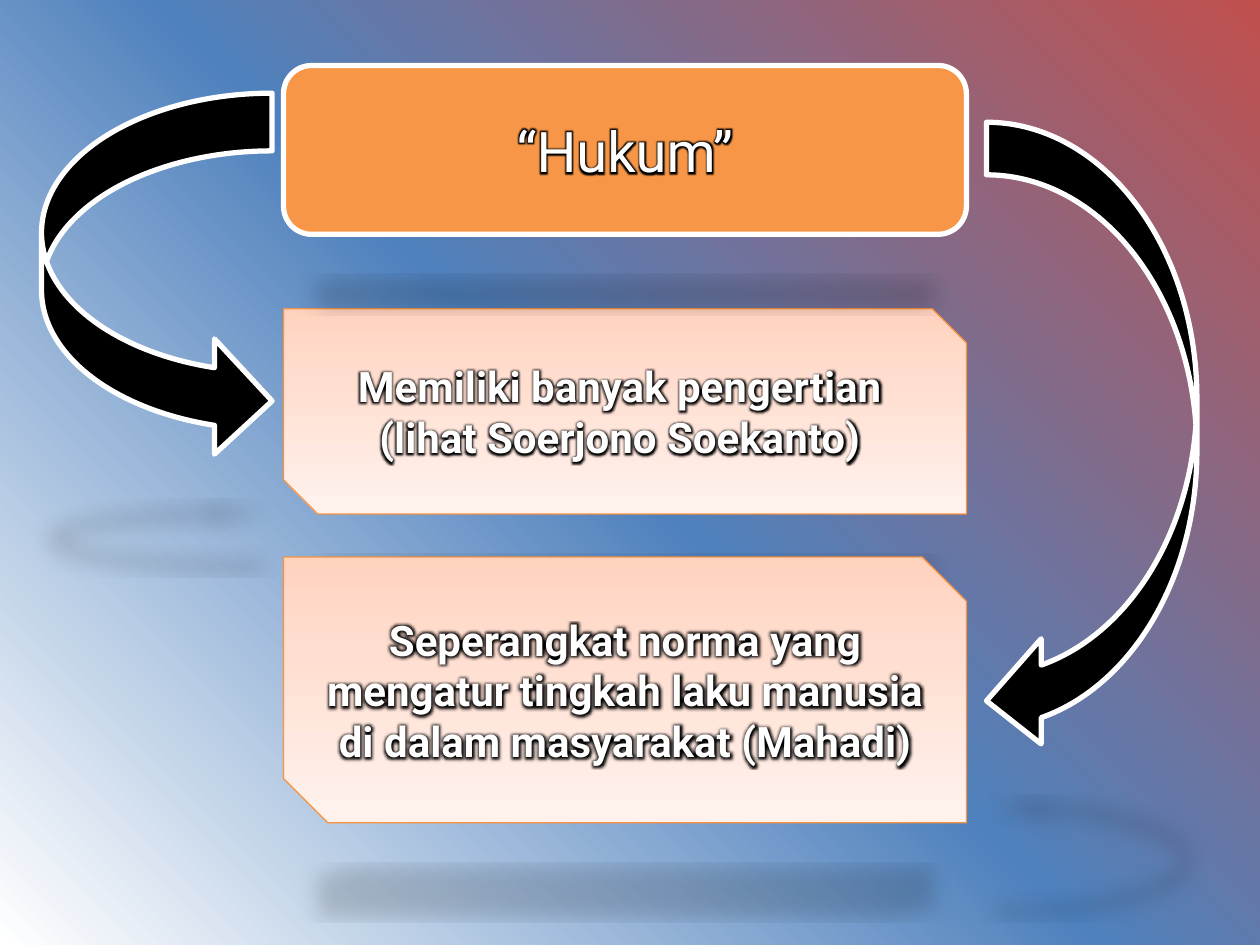
from dataclasses import dataclass

from lxml import etree
from pptx import Presentation
from pptx import util as u
from pptx.dml.color import RGBColor
from pptx.enum import shapes, text
from pptx.oxml import parse_xml
from pptx.oxml.ns import nsdecls, qn

COLORS = {"black": "000000", "white": "FFFFFF", "orange": "F79646", "edge": "F69240"}
BACKGROUND_STOPS = ((0, "FFFFFF"), (50, "4F81BD"), (100, "C0504D"))
CARD_STOPS = ((0, "FFD2BD"), (35, "FFDED0"), (100, "FFF2ED"))
DOWNWARD = '<a:lin ang="5400000" scaled="1"/>'
FROM_BOTTOM_LEFT = (
    '<a:path path="circle"><a:fillToRect t="100000" r="100000"/></a:path>'
)
FONT = "Roboto"
COLUMN_LEFT, COLUMN_WIDTH = 2.25, 5.42


@dataclass
class Box:
    kind: shapes.MSO_SHAPE
    top: float
    height: float
    lines: tuple[str, ...]
    size: int
    bold: bool
    edge: str
    edge_width: float
    fill: str | None = None  # None gives the card gradient


@dataclass
class Arrow:
    left: float
    top: float
    width: float
    height: float
    mirrored: bool = False
    adjustments: tuple[float, ...] = ()


CARD_STYLE = dict(kind=shapes.MSO_SHAPE.SNIP_2_DIAG_RECTANGLE, size=24, bold=True,
                  edge="edge", edge_width=0.75)
MEANINGS = Box(top=2.45, height=1.63, **CARD_STYLE,
               lines=("Memiliki banyak pengertian ", "(lihat Soerjono Soekanto) "))
NORMS = Box(top=4.42, height=2.11, **CARD_STYLE,
            lines=("Seperangkat norma yang mengatur tingkah laku manusia "
                   "di dalam masyarakat (Mahadi)",))
TITLE = Box(shapes.MSO_SHAPE.ROUNDED_RECTANGLE, 0.52, 1.34, ("“Hukum”",), 32, False,
            "white", 3, "orange")
LEFT_ARROW = Arrow(0.33, 0.74, 1.83, 2.9)
RIGHT_ARROW = Arrow(7.83, 0.97, 1.67, 5.01, True, (0.25, 0.5, 0.26))


def color(name: str) -> RGBColor:
    return RGBColor.from_string(COLORS[name])


def set_gradient(fill, owner, stops, direction: str) -> None:
    """Give the fill, which lies inside the owner element, the stops and direction."""
    fill.gradient()
    old = owner.find(".//" + qn("a:gradFill"))
    stop_xml = "".join(
        f'<a:gs pos="{place * 1000}"><a:srgbClr val="{value}"/></a:gs>'
        for place, value in stops
    )
    old.getparent().replace(old, parse_xml(
        f'<a:gradFill {nsdecls("a")} rotWithShape="1">'
        f"<a:gsLst>{stop_xml}</a:gsLst>{direction}</a:gradFill>"
    ))


def add_shadow(shape) -> None:
    """Cast a flattened, mirrored shadow below the shape."""
    shape.shadow.inherit = False
    effects = shape._element.spPr.find(qn("a:effectLst"))
    effects.append(parse_xml(
        f'<a:outerShdw {nsdecls("a")} blurRad="{u.Pt(12)}" dist="{u.Pt(25)}" '
        'dir="5400000" sx="90000" sy="-19000" rotWithShape="0">'
        f'<a:srgbClr val="{COLORS["black"]}"><a:alpha val="15000"/></a:srgbClr>'
        "</a:outerShdw>"
    ))


def add_glow(run) -> None:
    """Put a dark halo behind the letters; it must follow the run's fill."""
    effects = etree.Element(qn("a:effectLst"))
    effects.append(parse_xml(
        f'<a:glow {nsdecls("a")} rad="{u.Pt(5)}">'
        f'<a:srgbClr val="{COLORS["black"]}"/></a:glow>'
    ))
    run._r.rPr.find(qn("a:solidFill")).addnext(effects)


def set_line(shape, name: str, width: float) -> None:
    shape.line.color.rgb = color(name)
    shape.line.width = u.Pt(width)


def add_box(slide, box: Box) -> None:
    shape = slide.shapes.add_shape(
        box.kind, u.Inches(COLUMN_LEFT), u.Inches(box.top),
        u.Inches(COLUMN_WIDTH), u.Inches(box.height))
    if box.fill:
        shape.fill.solid()
        shape.fill.fore_color.rgb = color(box.fill)
    else:
        set_gradient(shape.fill, shape._element, CARD_STOPS, DOWNWARD)
    set_line(shape, box.edge, box.edge_width)
    add_shadow(shape)
    frame = shape.text_frame
    frame.word_wrap = True
    frame.vertical_anchor = text.MSO_ANCHOR.MIDDLE
    frame.text = "\n".join(box.lines)
    for paragraph in frame.paragraphs:
        paragraph.alignment = text.PP_ALIGN.CENTER
        for run in paragraph.runs:
            run.font.name = FONT
            run.font.size = u.Pt(box.size)
            run.font.bold = box.bold
            run.font.color.rgb = color("white")
            add_glow(run)


def add_arrow(slide, arrow: Arrow) -> None:
    shape = slide.shapes.add_shape(
        shapes.MSO_SHAPE.CURVED_RIGHT_ARROW, u.Inches(arrow.left), u.Inches(arrow.top),
        u.Inches(arrow.width), u.Inches(arrow.height))
    for index, value in enumerate(arrow.adjustments):
        shape.adjustments[index] = value
    if arrow.mirrored:
        shape._element.spPr.xfrm.set("flipH", "1")
    shape.fill.solid()
    shape.fill.fore_color.rgb = color("black")
    set_line(shape, "white", 3)
    add_shadow(shape)


def main() -> None:
    presentation = Presentation()
    presentation.slide_width = u.Inches(10)
    presentation.slide_height = u.Inches(7.5)
    slide = presentation.slides.add_slide(presentation.slide_layouts[6])
    set_gradient(slide.background.fill, slide.element, BACKGROUND_STOPS, FROM_BOTTOM_LEFT)
    add_arrow(slide, LEFT_ARROW)
    add_box(slide, MEANINGS)
    add_box(slide, NORMS)
    add_arrow(slide, RIGHT_ARROW)
    add_box(slide, TITLE)
    presentation.save("out.pptx")


if __name__ == "__main__":
    main()
